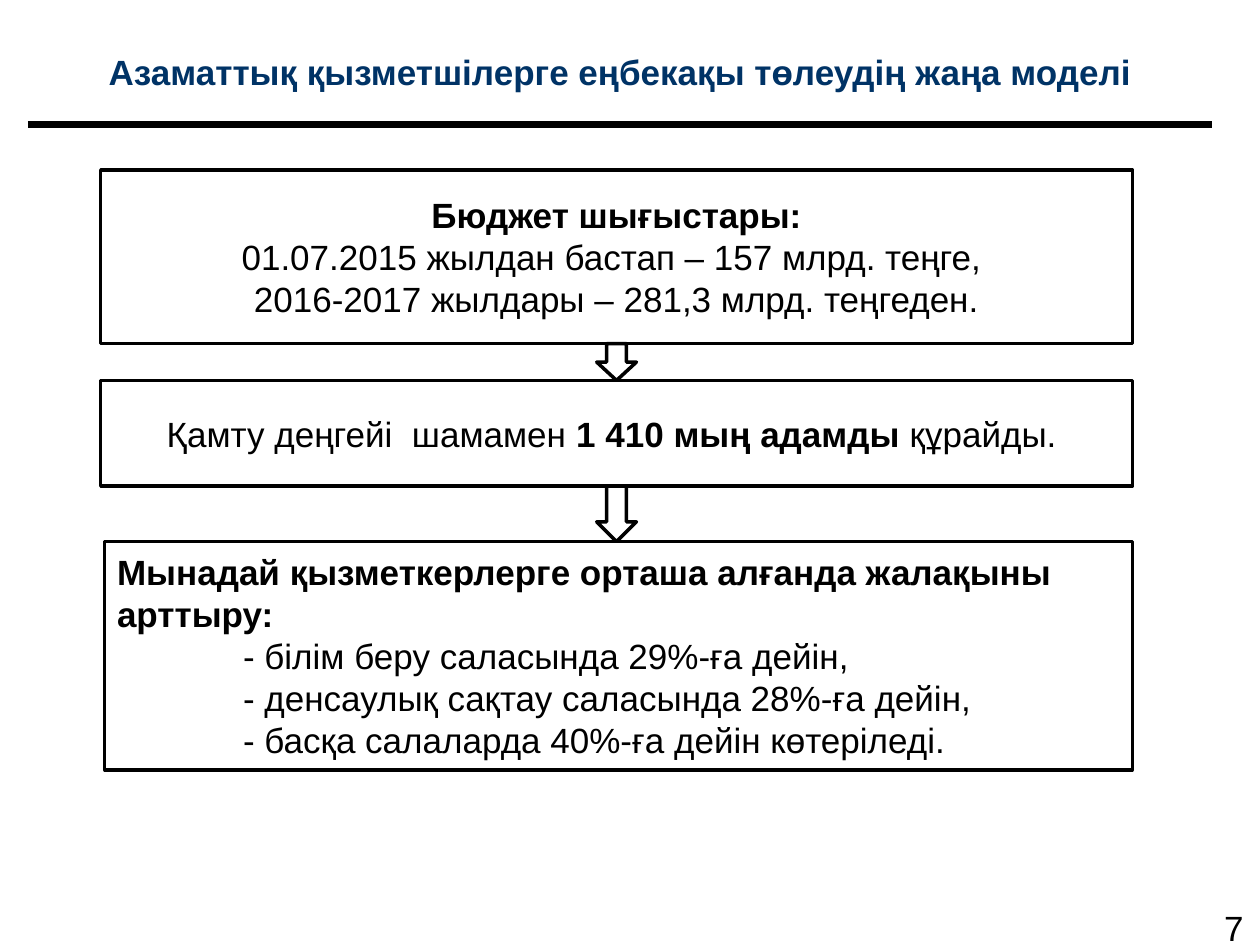
from dataclasses import dataclass

from pptx import Presentation
from pptx.dml.color import RGBColor
from pptx.enum.shapes import MSO_CONNECTOR as Connector, MSO_SHAPE as Shape
from pptx.enum.text import MSO_ANCHOR as Anchor, PP_ALIGN as Align
from pptx.oxml.xmlchemy import OxmlElement
from pptx.util import Cm, Pt


@dataclass(frozen=True)
class Theme:
    font: str = "Arial"
    size: float = 20
    outline: float = 2
    rule: float = 4.5
    ink: RGBColor = RGBColor(0, 0, 0)
    paper: RGBColor = RGBColor(255, 255, 255)
    title: RGBColor = RGBColor(0x00, 0x33, 0x66)


@dataclass(frozen=True)
class Span:
    text: str
    bold: bool = False


@dataclass(frozen=True)
class Line:
    spans: tuple[Span, ...]
    align: Align = Align.CENTER
    indent: float = 0


@dataclass(frozen=True)
class Box:
    """A place in centimetres and the lines of text within it."""
    left: float
    top: float
    width: float
    height: float
    lines: tuple[Line, ...]

    @property
    def bottom(self) -> float:
        return self.top + self.height


THEME = Theme()
ARROW_WIDTH = 0.8
ARROW_CENTER = 12.43
RIGHT = 22.83

TITLE = Box(-0.15, 0.33, 25.3, 2.21, (
    Line((Span("Азаматтық қызметшілерге еңбекақы төлеудің жаңа моделі", True),)),
))
PAGE_NUMBER = Box(24.43, 18.14, 1.4, 1.14, (Line((Span("7"),), Align.LEFT),))

BUDGET = Box(2.03, 3.43, RIGHT - 2.03, 3.5, (
    Line((Span("Бюджет шығыстары:", True),)),
    Line((Span("01.07.2015 жылдан бастап – 157 млрд. теңге, "),)),
    Line((Span("2016-2017 жылдары – 281,3 млрд. теңгеден."),)),
))
COVERAGE = Box(2.03, 7.67, RIGHT - 2.03, 2.13, (
    Line((Span("Қамту деңгейі  шамамен "),
          Span("1 410 мың адамды ", True),
          Span("құрайды. "))),
))
RAISES = Box(2.11, 10.92, RIGHT - 2.11, 4.6, (
    Line((Span("Мынадай қызметкерлерге орташа алғанда жалақыны  арттыру:", True),),
         Align.LEFT),
    *(Line((Span(f"- {item}"),), Align.LEFT, 2.54) for item in (
        "білім беру саласында 29%-ға дейін,",
        "денсаулық сақтау саласында 28%-ға дейін,",
        "басқа салаларда 40%-ға дейін көтеріледі.",
    )),
))
STEPS = (BUDGET, COVERAGE, RAISES)


def write(s, lines: tuple[Line, ...], color: RGBColor = THEME.ink,
          anchor: Anchor = Anchor.MIDDLE, wrap: bool = True) -> None:
    tf = s.text_frame
    tf.word_wrap = wrap
    tf.vertical_anchor = anchor
    for i, line in enumerate(lines):
        p = tf.paragraphs[0] if i == 0 else tf.add_paragraph()
        p.alignment = line.align
        if line.indent:
            pPr = p._p.get_or_add_pPr()
            pPr.set("marL", str(Cm(line.indent)))
            pPr.set("indent", "0")
        for span in line.spans:
            r = p.add_run()
            r.text = span.text
            r.font.name = THEME.font
            r.font.size = Pt(THEME.size)
            r.font.bold = span.bold
            r.font.color.rgb = color


def add_text(slide, box: Box, **style) -> None:
    s = slide.shapes.add_textbox(
        Cm(box.left), Cm(box.top), Cm(box.width), Cm(box.height))
    write(s, box.lines, **style)


def add_outlined(slide, kind: Shape, left: float, top: float,
                 width: float, height: float):
    s = slide.shapes.add_shape(kind, Cm(left), Cm(top), Cm(width), Cm(height))
    s.shadow.inherit = False
    s.fill.solid()
    s.fill.fore_color.rgb = THEME.paper
    s.line.color.rgb = THEME.ink
    s.line.width = Pt(THEME.outline)
    return s


def add_step(slide, box: Box) -> None:
    s = add_outlined(slide, Shape.RECTANGLE,
                     box.left, box.top, box.width, box.height)
    write(s, box.lines)


def add_arrow(slide, upper: Box, lower: Box) -> None:
    add_outlined(slide, Shape.DOWN_ARROW, ARROW_CENTER - ARROW_WIDTH / 2,
                 upper.bottom, ARROW_WIDTH, lower.top - upper.bottom)


def add_rule(slide, left: float, right: float, y: float) -> None:
    s = slide.shapes.add_connector(
        Connector.STRAIGHT, Cm(left), Cm(y), Cm(right), Cm(y))
    s.line.color.rgb = THEME.ink
    s.line.width = Pt(THEME.rule)
    s._element.spPr.append(OxmlElement("a:effectLst"))


def main() -> None:
    prs = Presentation()
    prs.slide_width, prs.slide_height = Cm(25.4), Cm(19.05)
    slide = prs.slides.add_slide(prs.slide_layouts[6])

    # Heading and page number
    add_rule(slide, 0.56, 24.43, 2.51)
    add_text(slide, TITLE, color=THEME.title)
    add_text(slide, PAGE_NUMBER, anchor=Anchor.TOP, wrap=False)

    # Steps, then the arrows that lead from each to the next
    for step in STEPS:
        add_step(slide, step)
    for upper, lower in zip(STEPS, STEPS[1:]):
        add_arrow(slide, upper, lower)

    prs.save("out.pptx")


if __name__ == "__main__":
    main()
